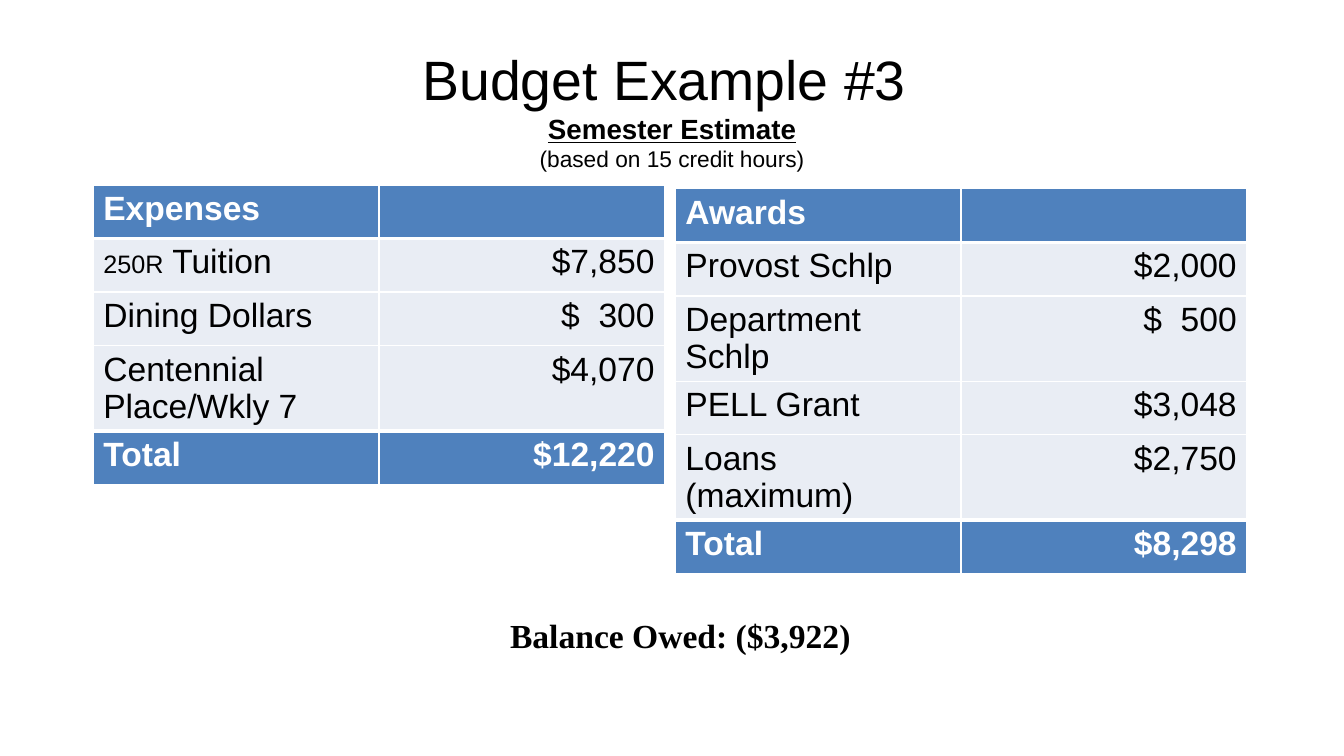
"""Build the semester budget slide with expenses, awards and balance."""
from copy import deepcopy
from lxml.etree import SubElement
from pptx import Presentation
from pptx.dml.color import RGBColor
from pptx.enum.text import MSO_ANCHOR, MSO_AUTO_SIZE, PP_ALIGN
from pptx.oxml import parse_xml
from pptx.oxml.ns import nsdecls, qn
from pptx.util import Cm, Pt

BLACK = RGBColor(0x00, 0x00, 0x00)
WHITE = RGBColor(0xFF, 0xFF, 0xFF)
BLUE = RGBColor(0x4F, 0x81, 0xBD)
PALE = RGBColor(0xE9, 0xED, 0xF4)


def style(run, size, color=BLACK, bold=False, name="Arial"):
    font = run.font
    font.name, font.size, font.bold = name, Pt(size), bold
    font.color.rgb = color


def border(cell, top, bottom):
    props = cell._tc.get_or_add_tcPr()
    for spot, (side, width) in enumerate(zip("LRTB", (1, 1, top, bottom))):
        props.insert(spot, parse_xml(
            f'<a:ln{side} {nsdecls("a")} w="{Pt(width)}"><a:solidFill>'
            f'<a:srgbClr val="{WHITE}"/></a:solidFill></a:ln{side}>'))


deck = Presentation()
deck.slide_width, deck.slide_height = Cm(33.87), Cm(19.05)
slide = deck.slides.add_slide(deck.slide_layouts[5])

title = slide.shapes.title
title.left, title.top, title.width, title.height = Cm(2.33), Cm(1.12), Cm(29.21), Cm(3.23)
frame = title.text_frame
frame.auto_size = MSO_AUTO_SIZE.NONE
frame.vertical_anchor = MSO_ANCHOR.MIDDLE
head = frame.paragraphs[0]
head.text = "Budget Example #3 \vSemester Estimate\v(based on 15 credit hours)"
head.alignment = PP_ALIGN.CENTER
for run, size in zip(head.runs, (39.6, 19.8, 16.2)):
    style(run, size, bold=size == 19.8)
    run.font.underline = size == 19.8
for run, gap in zip(head.runs, head._p.findall(qn("a:br"))):
    gap.append(deepcopy(run._r.rPr))

expenses = [
    ("Expenses", ""),
    ("250R Tuition", "$7,850"),
    ("Dining Dollars", "$  300"),
    ("Centennial Place/Wkly 7", "$4,070"),
    ("Total", "$12,220"),
]
awards = [
    ("Awards", ""),
    ("Provost Schlp", "$2,000"),
    ("Department Schlp", "$  500"),
    ("PELL Grant", "$3,048"),
    ("Loans (maximum)", "$2,750"),
    ("Total", "$8,298"),
]
for rows, left, top in ((expenses, 2.35, 4.66), (awards, 17.02, 4.76)):
    last = len(rows) - 1
    table = slide.shapes.add_table(
        len(rows), 2, Cm(left), Cm(top), Cm(14.4), Cm(1.35 * len(rows))).table
    table.horz_banding = False
    table.last_row = True
    for y, row in enumerate(rows):
        table.rows[y].height = Cm(1.35)
        strong = y in (0, last)
        for x, text in enumerate(row):
            cell = table.cell(y, x)
            cell.fill.solid()
            cell.fill.fore_color.rgb = BLUE if strong else PALE
            border(cell, 3 if y in (1, last) else 1, 3 if y in (0, last - 1) else 1)
            line = cell.text_frame.paragraphs[0]
            line.alignment = PP_ALIGN.RIGHT if x else PP_ALIGN.LEFT
            parts = ("250R", " Tuition") if text == "250R Tuition" else (text,)
            for part in filter(None, parts):
                run = line.add_run()
                run.text = part
                style(run, 18 if part == "250R" else 24, WHITE if strong else BLACK, strong)

box = slide.shapes.add_textbox(Cm(2.54), Cm(15.37), Cm(29.21), Cm(1.27))
box.text_frame.word_wrap = True
owed = box.text_frame.paragraphs[0]
owed.text = "Balance Owed: ($3,922)"
owed.alignment = PP_ALIGN.CENTER
style(owed.runs[0], 24, bold=True, name="Times New Roman")

deck.save("out.pptx")
